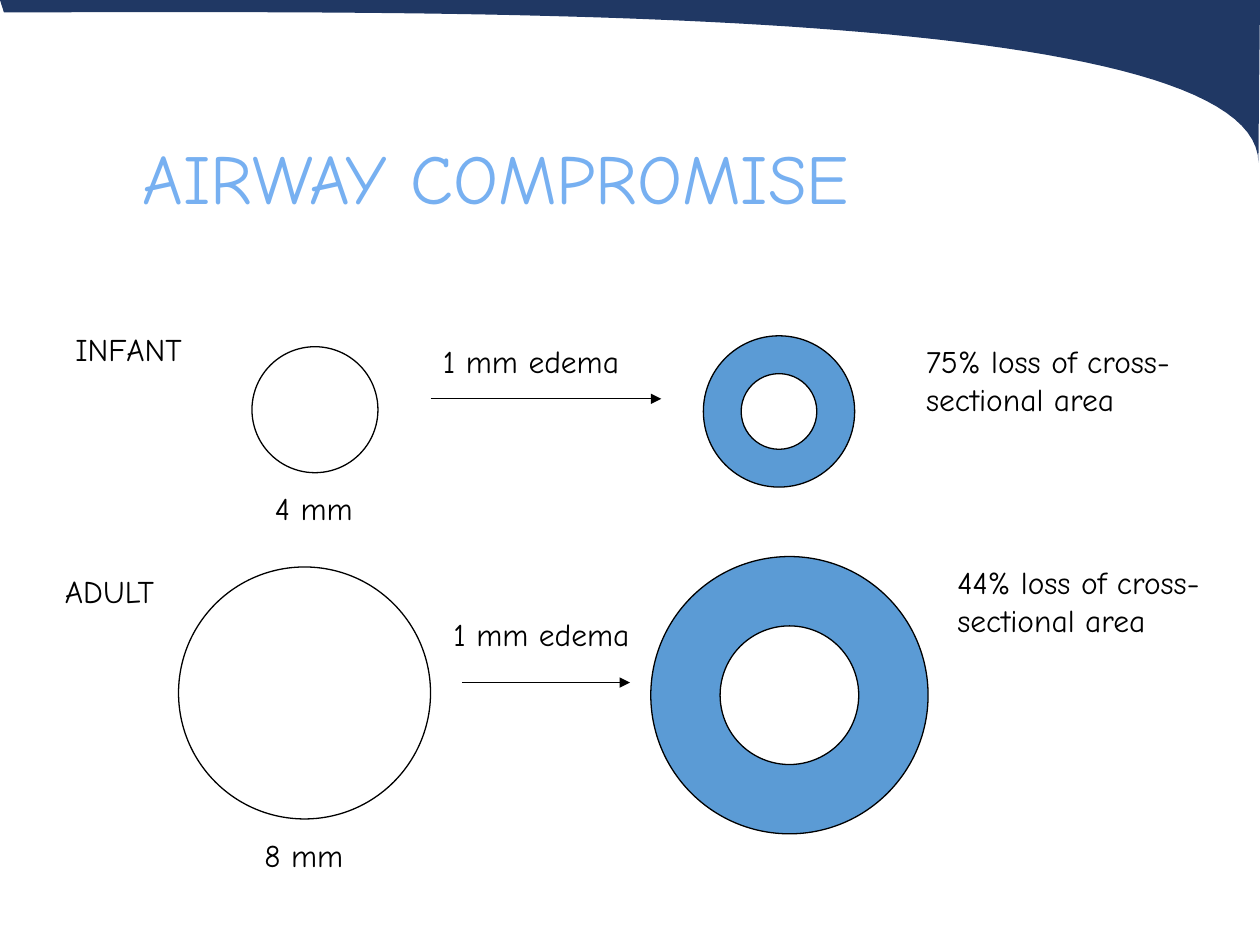
from dataclasses import dataclass

from lxml.etree import SubElement
from pptx import Presentation
from pptx.dml.color import RGBColor
from pptx.enum.shapes import MSO_CONNECTOR, MSO_SHAPE
from pptx.enum.text import MSO_ANCHOR, MSO_AUTO_SIZE, PP_ALIGN
from pptx.oxml.ns import qn
from pptx.util import Cm, Pt

NAVY = RGBColor(0x20, 0x38, 0x64)
SKY = RGBColor(0x77, 0xB0, 0xF1)
BLUE = RGBColor(0x5B, 0x9B, 0xD5)
BLACK = RGBColor(0, 0, 0)
FONT = "Comic Neue"
LINE_WIDTH = Pt(0.75)
LABEL_HEIGHT = 1.02
CURVE_STEPS = 60

Point = tuple[float, float]


@dataclass(frozen=True)
class Label:
    text: str
    left: float
    top: float
    width: float
    height: float = LABEL_HEIGHT


@dataclass(frozen=True)
class Disc:
    left: float
    top: float
    diameter: float


@dataclass(frozen=True)
class Arrow:
    start: float
    end: float
    y: float


@dataclass(frozen=True)
class Airway:
    """One patient row, in centimetres: open airway, swelling, narrowed airway."""
    healthy: Disc
    swollen: Disc
    arrow: Arrow
    labels: tuple[Label, ...]


AIRWAYS = (
    Airway(
        healthy=Disc(5.08, 6.99, 2.54),
        swollen=Disc(14.18, 6.77, 3.05),
        arrow=Arrow(8.68, 13.33, 8.04),
        labels=(
            Label("INFANT", 1.27, 6.53, 3.38),
            Label("4 mm", 5.29, 9.74, 2.33),
            Label("1 mm edema", 8.68, 6.77, 5.08),
            Label("75% loss of cross-sectional area", 18.42, 6.77, 6.14, 1.8),
        ),
    ),
    Airway(
        healthy=Disc(3.6, 11.43, 5.08),
        swollen=Disc(13.12, 11.22, 5.59),
        arrow=Arrow(9.31, 12.7, 13.76),
        labels=(
            Label("ADULT", 1.06, 11.4, 2.75),
            Label("8 mm", 5.08, 16.72, 2.75),
            Label("1 mm edema", 8.89, 12.28, 4.24),
            Label("44% loss of cross-sectional area", 19.05, 11.22, 5.93, 2.57),
        ),
    ),
)


def bezier(p0: Point, p1: Point, p2: Point, p3: Point) -> list[Point]:
    """Points along a cubic curve, without its start."""
    points = []
    for step in range(1, CURVE_STEPS + 1):
        t = step / CURVE_STEPS
        u = 1 - t
        weights = (u**3, 3 * u * u * t, 3 * u * t * t, t**3)
        points.append(tuple(
            sum(w * p[axis] for w, p in zip(weights, (p0, p1, p2, p3)))
            for axis in (0, 1)
        ))
    return points


def style_run(paragraph, size: float, color: RGBColor) -> None:
    font = paragraph.runs[0].font
    font.name = FONT
    font.size = Pt(size)
    font.color.rgb = color


def draw_header_sweep(slide) -> None:
    corner, tip, left_edge = (25.4, 0), (25.37, 3.28), (0.08, 0.25)
    outline = [corner]
    outline += bezier(corner, (25.4, 0.36), (25.37, 2.92), tip)
    outline += bezier(tip, (25.35, 0), (8.53, 0.25), left_edge)
    builder = slide.shapes.build_freeform(0, 0)
    builder.add_line_segments([(Cm(x), Cm(y)) for x, y in outline], close=True)
    sweep = builder.convert_to_shape()
    sweep.shadow.inherit = False
    sweep.fill.solid()
    sweep.fill.fore_color.rgb = NAVY
    sweep.line.fill.background()


def write_title(slide) -> None:
    title = slide.shapes.title
    title.left, title.top, title.width, title.height = Cm(1.27), Cm(2.11), Cm(22.86), Cm(3.12)
    frame = title.text_frame
    frame.text = "AIRWAY COMPROMISE"
    frame.auto_size = MSO_AUTO_SIZE.NONE
    frame.vertical_anchor = MSO_ANCHOR.MIDDLE
    heading = frame.paragraphs[0]
    heading.alignment = PP_ALIGN.LEFT
    heading.line_spacing = 0.9
    properties = heading._p.get_or_add_pPr()
    properties.set("marL", str(Cm(1.35)))
    properties.set("indent", "0")
    style_run(heading, 40, SKY)


def draw_disc(slide, disc: Disc, preset: MSO_SHAPE, fill: RGBColor | None = None) -> None:
    size = Cm(disc.diameter)
    circle = slide.shapes.add_shape(preset, Cm(disc.left), Cm(disc.top), size, size)
    circle.shadow.inherit = False
    if fill is None:
        circle.fill.background()
    else:
        circle.fill.solid()
        circle.fill.fore_color.rgb = fill
    circle.line.color.rgb = BLACK
    circle.line.width = LINE_WIDTH


def draw_arrow(slide, arrow: Arrow) -> None:
    y = Cm(arrow.y)
    connector = slide.shapes.add_connector(
        MSO_CONNECTOR.STRAIGHT, Cm(arrow.start), y, Cm(arrow.end), y)
    connector.line.color.rgb = BLACK
    connector.line.width = LINE_WIDTH
    SubElement(connector.line._get_or_add_ln(), qn("a:tailEnd"), type="triangle")
    SubElement(connector._element.spPr, qn("a:effectLst"))


def write_label(slide, label: Label) -> None:
    box = slide.shapes.add_textbox(
        Cm(label.left), Cm(label.top), Cm(label.width), Cm(label.height))
    frame = box.text_frame
    frame.word_wrap = True
    frame.text = label.text
    style_run(frame.paragraphs[0], 18, BLACK)


def main() -> None:
    presentation = Presentation()
    presentation.slide_width, presentation.slide_height = Cm(25.4), Cm(19.05)
    slide = presentation.slides.add_slide(presentation.slide_layouts.get_by_name("Title Only"))
    draw_header_sweep(slide)
    write_title(slide)
    for airway in AIRWAYS:
        draw_disc(slide, airway.swollen, MSO_SHAPE.DONUT, BLUE)
        draw_disc(slide, airway.healthy, MSO_SHAPE.OVAL)
        draw_arrow(slide, airway.arrow)
        for label in airway.labels:
            write_label(slide, label)
    presentation.save("out.pptx")


if __name__ == "__main__":
    main()
